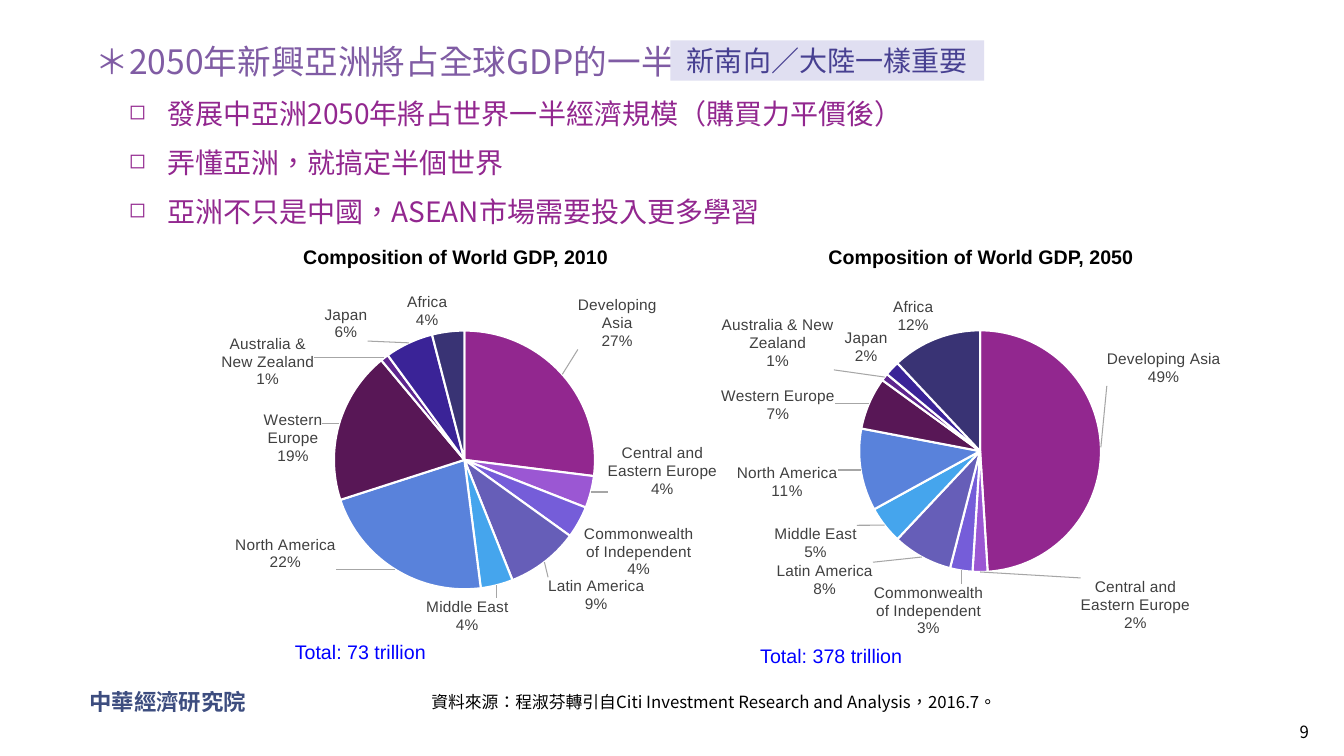
from copy import deepcopy

from lxml import etree
from pptx import Presentation
from pptx.chart.data import CategoryChartData
from pptx.dml.color import RGBColor
from pptx.enum.chart import XL_CHART_TYPE, XL_LABEL_POSITION
from pptx.enum.shapes import MSO_SHAPE
from pptx.enum.text import MSO_ANCHOR, PP_ALIGN
from pptx.oxml import parse_xml
from pptx.oxml.ns import nsdecls, qn
from pptx.util import Inches, Pt

PIE = XL_CHART_TYPE.PIE
OUTSIDE = XL_LABEL_POSITION.OUTSIDE_END
RECTANGLE = MSO_SHAPE.RECTANGLE
TOP, MIDDLE = MSO_ANCHOR.TOP, MSO_ANCHOR.MIDDLE
LEFT, CENTER, RIGHT, JUSTIFY = PP_ALIGN.LEFT, PP_ALIGN.CENTER, PP_ALIGN.RIGHT, PP_ALIGN.JUSTIFY

CJK = "Noto Sans CJK SC"
COLORS = {
    "white": "FFFFFF", "black": "000000", "label": "404040", "leader": "A6A6A6",
    "heading": "805CA4", "bullet": "92278F", "total": "0000FF",
    "institute": "3D4D7F", "callout": "E0DFF1", "callout text": "474091",
}
# Region: (slice colour, share in 2010, share in 2050)
REGIONS = {
    "Developing Asia": ("92278F", 27, 49),
    "Central and Eastern Europe": ("9B57D3", 4, 2),
    "Commonwealth of Independent": ("755DD9", 4, 3),
    "Latin America": ("665EB8", 9, 8),
    "Middle East": ("45A5ED", 4, 5),
    "North America": ("5982DB", 22, 11),
    "Western Europe": ("581756", 19, 7),
    "Australia & New Zealand": ("5E258E", 1, 1),
    "Japan": ("3A2397", 6, 2),
    "Africa": ("393374", 4, 12),
}
# Label shifts from the outside end, as fractions of the chart, by slice index
SHIFTS_2010 = {
    0: (0.02, -0.06), 1: (0.02, -0.14), 2: (0, 0), 3: (0, 0.03),
    4: (-0.13, 0.02), 5: (-0.1, -0.11), 6: (-0.02, 0.12), 7: (-0.12, 0.1),
    8: (-0.07, 0.01),
}
SHIFTS_2050 = {
    0: (0, -0.22), 1: (0.27, 0), 2: (0.04, 0.02), 3: (-0.08, 0),
    4: (-0.04, -0.01), 5: (-0.03, -0.02), 6: (-0.05, 0.06), 7: (-0.08, -0.01),
    9: (0, 0),
}
# Year, shares column, chart box, plot area, label shifts, title left, total and its place
PIES = [
    (2010, 1, (1.77, 2.88, 5.51, 3.51), (0.28, 0.1, 0.47, 0.75), SHIFTS_2010,
     2.59, "Total: 73 trillion", (2.71, 6.3)),
    (2050, 2, (6.98, 2.87, 5.71, 3.57), (0.27, 0.11, 0.42, 0.68), SHIFTS_2050,
     7.8, "Total: 378 trillion", (7.38, 6.34)),
]


def rgb(name):
    return RGBColor.from_string(COLORS[name])


def manual_layout(**settings):
    """Return a chart layout element with the given settings in order."""
    values = "".join(f'<c:{key} val="{value}"/>' for key, value in settings.items())
    return parse_xml(
        f'<c:layout {nsdecls("c")}><c:manualLayout>{values}</c:manualLayout></c:layout>')


class SlideBuilder:
    def __init__(self, slide):
        self.slide = slide

    def style(self, paragraph, size, color, font=CJK, bold=False, align=LEFT):
        paragraph.alignment = align
        paragraph.font.size = Pt(size)
        paragraph.font.bold = bold
        paragraph.font.name = font
        paragraph.font.color.rgb = rgb(color)
        properties = paragraph._p.pPr.find(qn("a:defRPr"))
        properties.set("lang", "zh-TW")
        etree.SubElement(properties, qn("a:ea")).set("typeface", font)

    def text(self, box, words, size, color, anchor=TOP, spacing=1.0, **style):
        shape = self.slide.shapes.add_textbox(*map(Inches, box))
        frame = shape.text_frame
        frame.word_wrap = True
        frame.vertical_anchor = anchor
        frame.text = words
        frame.paragraphs[0].line_spacing = spacing
        self.style(frame.paragraphs[0], size, color, **style)

    def outline(self, box, heading, points):
        """Add a heading line followed by square-bulleted points."""
        frame = self.slide.shapes.add_textbox(*map(Inches, box)).text_frame
        frame.word_wrap = True
        frame.text = "\n".join([heading, *points])
        for index, paragraph in enumerate(frame.paragraphs):
            paragraph.line_spacing = Pt(30)
            if index == 0:
                self.style(paragraph, 24, "heading")
                continue
            paragraph.space_before = Pt(5)
            properties = paragraph._p.get_or_add_pPr()
            properties.set("marL", str(Inches(0.71)))
            properties.set("indent", str(Inches(-0.38)))
            etree.SubElement(properties, qn("a:buSzPct")).set("val", "75000")
            etree.SubElement(properties, qn("a:buChar")).set("char", "◻")
            self.style(paragraph, 20, "bullet")

    def callout(self, box, words):
        shape = self.slide.shapes.add_shape(RECTANGLE, *map(Inches, box))
        shape.shadow.inherit = False
        shape.fill.solid()
        shape.fill.fore_color.rgb = rgb("callout")
        shape.line.fill.background()
        shape.text_frame.vertical_anchor = MIDDLE
        shape.text_frame.text = words
        self.style(shape.text_frame.paragraphs[0], 20, "callout text", align=CENTER)

    def pie(self, box, plot_area, column, shifts):
        data = CategoryChartData()
        data.categories = list(REGIONS)
        data.add_series("Series 1", [region[column] for region in REGIONS.values()])
        chart = self.slide.shapes.add_chart(PIE, *map(Inches, box), data).chart
        chart.has_legend = False
        chart.has_title = False
        chart.font.name = "Calibri"
        chart.font.size = Pt(10)
        chart.font.color.rgb = rgb("black")
        plot = chart.plots[0]
        plot.vary_by_categories = True
        series = plot.series[0]
        for index, (color, *_) in enumerate(REGIONS.values()):
            slice_format = series.points[index].format
            slice_format.fill.solid()
            slice_format.fill.fore_color.rgb = RGBColor.from_string(color)
            slice_format.line.color.rgb = rgb("white")
            slice_format.line.width = Pt(1.5)
        self.place_plot(chart, plot_area)
        self.label_slices(series.data_labels, shifts)

    def place_plot(self, chart, plot_area):
        area = chart._chartSpace.chart.plotArea
        for layout in area.findall(qn("c:layout")):
            area.remove(layout)
        x, y, w, h = plot_area
        area.insert(0, manual_layout(layoutTarget="inner", xMode="edge", yMode="edge",
                                     x=x, y=y, w=w, h=h))

    def label_slices(self, labels, shifts):
        labels.font.name = "Arial"
        labels.font.size = Pt(11)
        labels.font.color.rgb = rgb("label")
        labels.number_format = "0%"
        labels.number_format_is_linked = False
        labels.position = OUTSIDE
        labels.show_value = False
        labels.show_category_name = True
        labels.show_percentage = True
        element = labels._element
        for leader in element.findall(qn("c:showLeaderLines")):
            element.remove(leader)
        etree.SubElement(element, qn("c:separator")).text = "\n"
        shared = list(element)
        for position, (index, (x, y)) in enumerate(shifts.items()):
            label = parse_xml(f'<c:dLbl {nsdecls("c")}><c:idx val="{index}"/></c:dLbl>')
            label.append(manual_layout(x=x, y=y))
            label.extend(deepcopy(shared))
            element.insert(position, label)
        etree.SubElement(element, qn("c:showLeaderLines")).set("val", "1")
        element.append(parse_xml(
            f'<c:leaderLines {nsdecls("c", "a")}><c:spPr><a:ln w="9525"><a:solidFill>'
            f'<a:srgbClr val="{COLORS["leader"]}"/></a:solidFill></a:ln></c:spPr>'
            '</c:leaderLines>'))


def main():
    presentation = Presentation()
    presentation.slide_width = Inches(13.33)
    presentation.slide_height = Inches(7.5)
    builder = SlideBuilder(presentation.slides.add_slide(presentation.slide_layouts[6]))

    builder.text((0.79, 6.77, 1.81, 0.37), "中華經濟研究院", 16, "institute",
                 anchor=MIDDLE, bold=True)
    builder.text((10.87, 7.05, 2.21, 0.41), "9", 12, "black", anchor=MIDDLE, align=RIGHT)
    builder.outline((0.85, 0.34, 11.5, 2.1), "＊2050年新興亞洲將占全球GDP的一半", [
        "發展中亞洲2050年將占世界一半經濟規模（購買力平價後）",
        "弄懂亞洲，就搞定半個世界",
        "亞洲不只是中國，ASEAN市場需要投入更多學習",
    ])
    for year, column, box, plot_area, shifts, title_left, total, total_place in PIES:
        builder.pie(box, plot_area, column, shifts)
        builder.text((title_left, 2.38, 3.86, 0.39), f"Composition of World GDP, {year}",
                     14, "black", font="Arial", bold=True, align=CENTER)
        builder.text((*total_place, 1.73, 0.39), total, 14, "total", font="Arial",
                     align=CENTER)
    builder.text((4.18, 6.84, 7.79, 0.34),
                 "資料來源：程淑芬轉引自Citi Investment Research and Analysis，2016.7。",
                 12, "black", spacing=0.9, align=JUSTIFY)
    builder.callout((6.65, 0.4, 3.11, 0.4), "新南向／大陸一樣重要")
    presentation.save("out.pptx")


if __name__ == "__main__":
    main()
